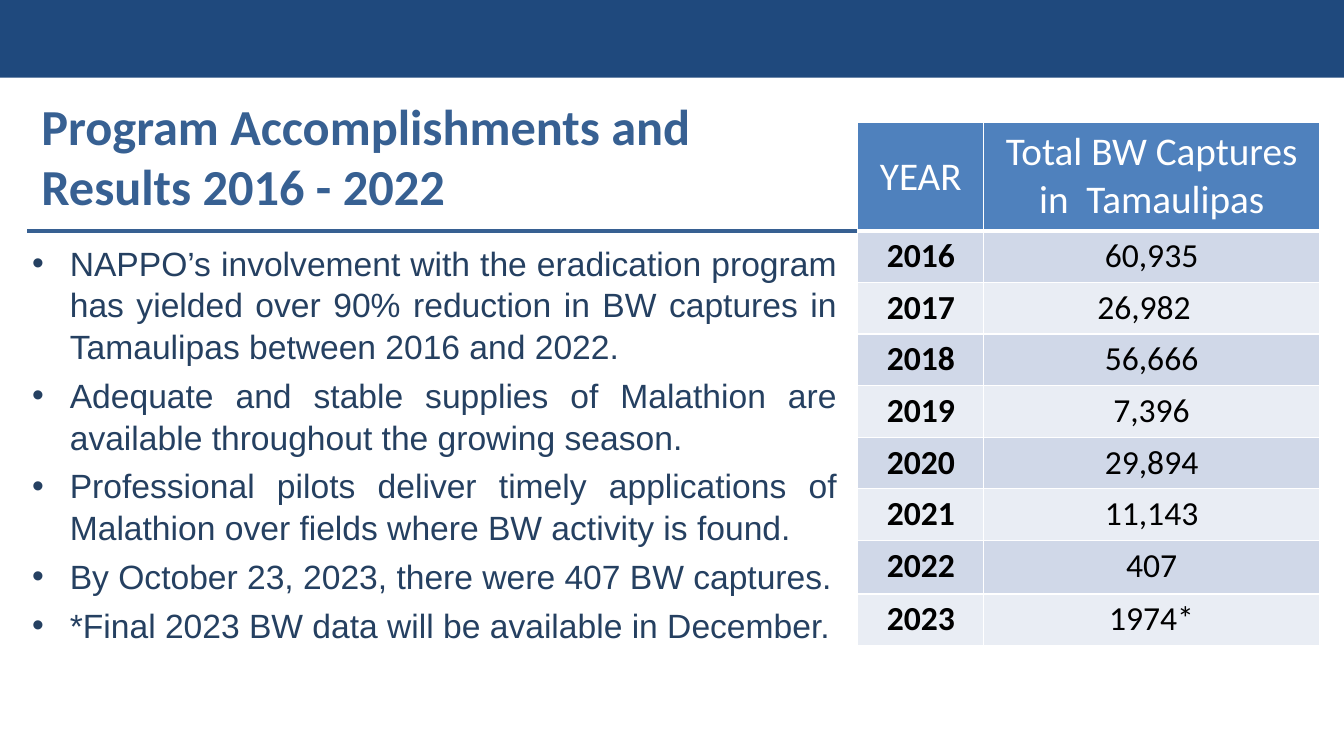
from lxml import etree
from pptx import Presentation
from pptx.dml.color import RGBColor
from pptx.enum.shapes import MSO_CONNECTOR, MSO_SHAPE
from pptx.enum.text import MSO_ANCHOR, PP_ALIGN
from pptx.oxml.ns import qn
from pptx.util import Pt

LEFT, CENTER, JUSTIFY = PP_ALIGN.LEFT, PP_ALIGN.CENTER, PP_ALIGN.JUSTIFY
MIDDLE, TOP = MSO_ANCHOR.MIDDLE, MSO_ANCHOR.TOP
RECTANGLE, STRAIGHT = MSO_SHAPE.RECTANGLE, MSO_CONNECTOR.STRAIGHT

COLORS = {
    "band": "1F497D",
    "title": "376092",
    "body": "254061",
    "header": "4F81BD",
    "odd_row": "D0D8E8",
    "even_row": "E9EDF4",
    "white": "FFFFFF",
    "black": "000000",
}
BULLETS = [
    "NAPPO’s involvement with the eradication program has yielded over 90% reduction in BW captures in Tamaulipas between 2016 and 2022.",
    "Adequate and stable supplies of Malathion are available throughout the growing season.",
    "Professional pilots deliver timely applications of Malathion over fields where BW activity is found.",
    "By October 23, 2023, there were 407 BW captures.",
    "*Final 2023 BW data will be available in December.",
]
CAPTURES = [
    ("YEAR", "Total BW Captures in  Tamaulipas"),
    ("2016", "60,935"),
    ("2017", "26,982"),
    ("2018", "56,666"),
    ("2019", "7,396"),
    ("2020", "29,894"),
    ("2021", "11,143"),
    ("2022", "407"),
    ("2023", "1974*"),
]
ROW_HEIGHTS = [77] + [36.9] * 6 + [38.2, 36.9]
COLUMN_WIDTHS = [90, 239.76]


def write_text(text_frame, lines, size, color, font="Calibri", bold=False,
               align=LEFT, bullet=False, space_before=0, line_spacing=1.0):
    for index, line in enumerate(lines):
        paragraph = text_frame.paragraphs[0] if index == 0 else text_frame.add_paragraph()
        paragraph.alignment = align
        paragraph.line_spacing = line_spacing
        paragraph.space_before = Pt(space_before if index else 0)
        if bullet:
            properties = paragraph._p.get_or_add_pPr()
            properties.set("marL", str(Pt(27)))
            properties.set("indent", str(-Pt(27)))
            etree.SubElement(properties, qn("a:buFont")).set("typeface", "Arial")
            etree.SubElement(properties, qn("a:buChar")).set("char", "•")
        run = paragraph.add_run()
        run.text = line
        run.font.name = font
        run.font.size = Pt(size)
        run.font.bold = bold
        run.font.color.rgb = RGBColor.from_string(COLORS[color])


def set_borders(cell, widths):
    properties = cell._tc.get_or_add_tcPr()
    for index, (side, width) in enumerate(widths.items()):
        line = etree.Element(qn(f"a:ln{side}"), w=str(Pt(width)))
        fill = etree.SubElement(line, qn("a:solidFill"))
        etree.SubElement(fill, qn("a:srgbClr")).set("val", COLORS["white"])
        properties.insert(index, line)


presentation = Presentation()
presentation.slide_width = Pt(960)
presentation.slide_height = Pt(540)
slide = presentation.slides.add_slide(presentation.slide_layouts[5])

band = slide.shapes.add_shape(RECTANGLE, Pt(0), Pt(0), Pt(960), Pt(55.5))
band.shadow.inherit = False
band.fill.solid()
band.fill.fore_color.rgb = RGBColor.from_string(COLORS["band"])
band.line.fill.background()

title = slide.shapes.title
title.left, title.top, title.width, title.height = Pt(22.3), Pt(60.5), Pt(555.8), Pt(100.8)
title.text_frame.word_wrap = True
title.text_frame.vertical_anchor = MIDDLE
write_text(title.text_frame, ["Program Accomplishments and", "Results 2016 - 2022"],
           size=36, color="title", bold=True)

rule = slide.shapes.add_connector(STRAIGHT, Pt(19.4), Pt(164.9), Pt(612.7), Pt(164.9))
rule.line.color.rgb = RGBColor.from_string(COLORS["title"])
rule.line.width = Pt(3)
etree.SubElement(rule._element.spPr, qn("a:effectLst"))

body = slide.shapes.add_textbox(Pt(15.8), Pt(168.5), Pt(589), Pt(292.3))
body.text_frame.word_wrap = True
write_text(body.text_frame, BULLETS, size=24, color="body", font="Arial", align=JUSTIFY,
           bullet=True, space_before=4.8, line_spacing=1.04)

table = slide.shapes.add_table(
    len(CAPTURES), len(COLUMN_WIDTHS), Pt(612.7), Pt(87.8),
    Pt(sum(COLUMN_WIDTHS)), Pt(sum(ROW_HEIGHTS))).table
for column, width in zip(table.columns, COLUMN_WIDTHS):
    column.width = Pt(width)
for row_index, (values, height) in enumerate(zip(CAPTURES, ROW_HEIGHTS)):
    table.rows[row_index].height = Pt(height)
    is_header = row_index == 0
    fill = "header" if is_header else "odd_row" if row_index % 2 else "even_row"
    for column_index, value in enumerate(values):
        is_year = column_index == 0
        cell = table.cell(row_index, column_index)
        cell.vertical_anchor = MIDDLE if is_header and is_year else TOP
        cell.fill.solid()
        cell.fill.fore_color.rgb = RGBColor.from_string(COLORS[fill])
        set_borders(cell, {"L": 1, "R": 1, "T": 3 if row_index == 1 else 1,
                           "B": 3 if is_header else 1})
        write_text(cell.text_frame, [value], size=28 if is_header else 24,
                   color="white" if is_header else "black",
                   bold=is_year and not is_header, align=CENTER)
table.cell(2, 1).margin_right = Pt(18)

presentation.save("out.pptx")
